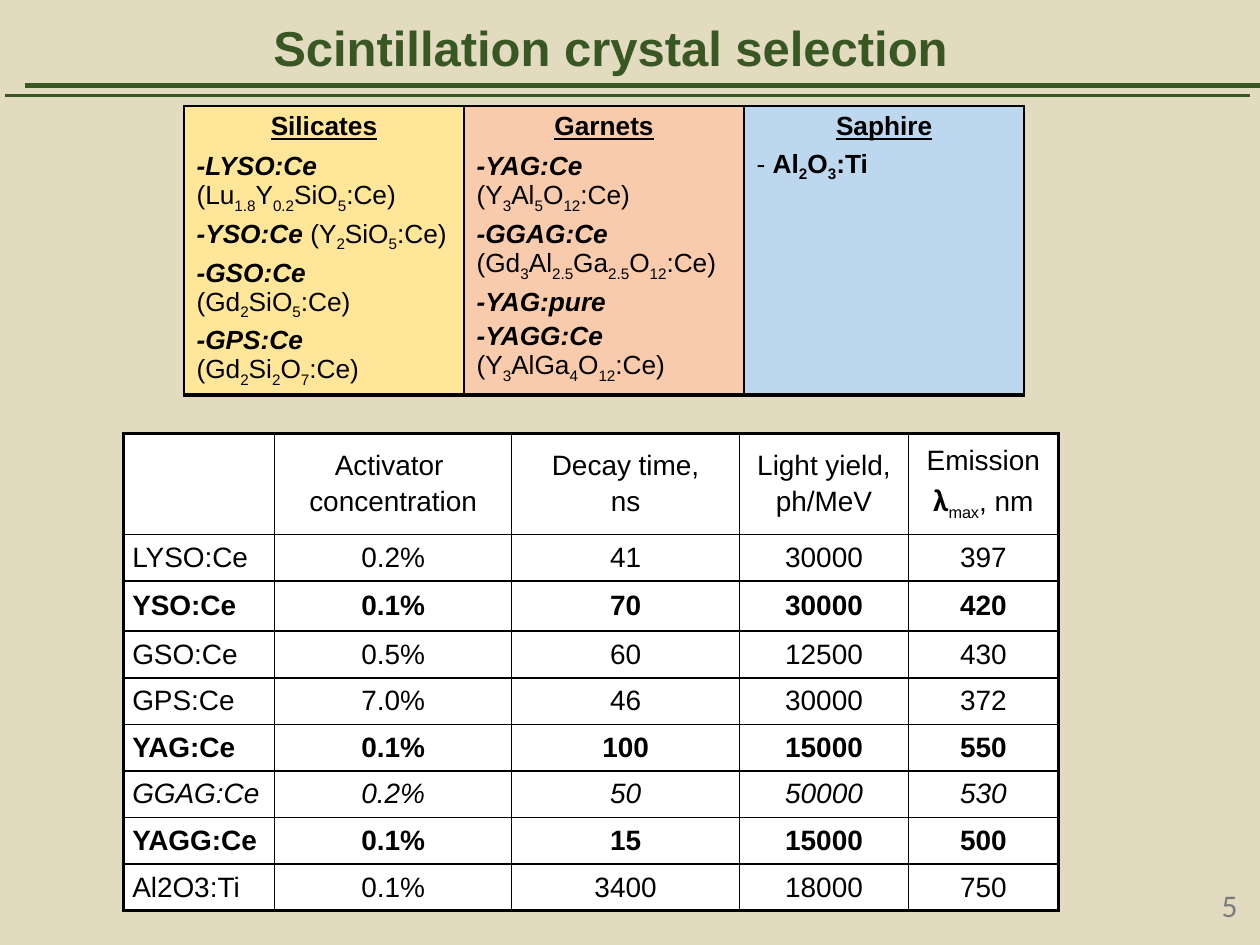
from pptx import Presentation
from pptx import util as u
from pptx.dml.color import RGBColor
from pptx.enum import shapes, text
from pptx.oxml import parse_xml
from pptx.oxml.ns import nsdecls

SAND = RGBColor(0xE3, 0xDB, 0xBF)
GREEN = RGBColor(0x38, 0x57, 0x23)
BLACK = RGBColor(0, 0, 0)
WHITE = RGBColor(0xFF, 0xFF, 0xFF)
GRAY = RGBColor(0x7C, 0x7C, 0x7C)
YELLOW = RGBColor(0xFF, 0xE6, 0x99)
PEACH = RGBColor(0xF8, 0xCB, 0xAD)
BLUE = RGBColor(0xBD, 0xD7, 0xEE)
LEFT, CENTER, RIGHT = text.PP_ALIGN.LEFT, text.PP_ALIGN.CENTER, text.PP_ALIGN.RIGHT
MIDDLE = text.MSO_ANCHOR.MIDDLE
BOLD, ITALIC = {"bold": True}, {"italic": True}
STRONG = BOLD | ITALIC

GROUPS = [
    ("Silicates", YELLOW, [("-LYSO:Ce ", "(Lu_1.8_Y_0.2_SiO_5_:Ce)"),
                           ("-YSO:Ce ", "(Y_2_SiO_5_:Ce)"),
                           ("-GSO:Ce ", "(Gd_2_SiO_5_:Ce)"),
                           ("-GPS:Ce ", "(Gd_2_Si_2_O_7_:Ce)")]),
    ("Garnets", PEACH, [("-YAG:Ce ", "(Y_3_Al_5_O_12_:Ce)"),
                        ("-GGAG:Ce ", "(Gd_3_Al_2.5_Ga_2.5_O_12_:Ce)"),
                        ("-YAG:pure", ""),
                        ("-YAGG:Ce ", "(Y_3_AlGa_4_O_12_:Ce)")]),
    ("Saphire", BLUE, []),
]
HEADINGS = [[], ["Activator ", "concentration"], ["Decay time,", "ns"],
            ["Light yield,", "ph/MeV"], ["Emission"]]
CRYSTALS = [
    (("LYSO:Ce", "0.2%", "41", "30000", "397"), {}),
    (("YSO:Ce", "0.1%", "70", "30000", "420"), BOLD),
    (("GSO:Ce", "0.5%", "60", "12500", "430"), {}),
    (("GPS:Ce", "7.0%", "46", "30000", "372"), {}),
    (("YAG:Ce", "0.1%", "100", "15000", "550"), BOLD),
    (("GGAG:Ce", "0.2%", "50", "50000", "530"), ITALIC),
    (("YAGG:Ce", "0.1%", "15", "15000", "500"), BOLD),
    (("Al2O3:Ti", "0.1%", "3400", "18000", "750"), {}),
]


class Board:
    columns, rows = 100, 75
    font = "Arial"

    def __init__(self):
        self.deck = Presentation()
        self.deck.slide_width, self.deck.slide_height = u.Inches(10), u.Inches(7.5)
        self.page = self.deck.slides.add_slide(self.deck.slide_layouts[5])
        self.page.background.fill.solid()
        self.page.background.fill.fore_color.rgb = SAND

    def x(self, column):
        return round(self.deck.slide_width * column / self.columns)

    def y(self, row):
        return round(self.deck.slide_height * row / self.rows)

    def area(self, left, top, width, height):
        return self.x(left), self.y(top), self.x(width), self.y(height)

    def title(self, words, *area):
        box = self.page.shapes.title
        box.left, box.top, box.width, box.height = self.area(*area)
        box.text_frame.vertical_anchor = MIDDLE
        para = self.paragraph(box.text_frame, CENTER, line=0.9)
        self.run(para, words, 28, color=GREEN, bold=True)

    def rule(self, left, right, row, weight):
        line = self.page.shapes.add_connector(
            shapes.MSO_CONNECTOR.STRAIGHT, self.x(left), self.y(row), self.x(right), self.y(row))
        line.line.color.rgb = GREEN
        line.line.width = u.Pt(weight)
        line._element.spPr.append(parse_xml(f"<a:effectLst {nsdecls('a')}/>"))

    def label(self, words, *area):
        box = self.page.shapes.add_textbox(*self.area(*area))
        box.text_frame.word_wrap = True
        box.text_frame.vertical_anchor = MIDDLE
        self.run(self.paragraph(box.text_frame, RIGHT), words, 18, font="Calibri", color=GRAY)

    def table(self, left, top, widths, heights):
        frame = self.page.shapes.add_table(
            len(heights), len(widths), *self.area(left, top, sum(widths), sum(heights)))
        table = frame.table
        table.first_row = table.horz_banding = False
        for column, width in zip(table.columns, widths):
            column.width = self.x(width)
        for row, height in zip(table.rows, heights):
            row.height = self.y(height)
        return table

    def cell(self, cell, fill, edges):
        cell.fill.solid()
        cell.fill.fore_color.rgb = fill
        for place, (side, weight) in enumerate(zip("LRTB", edges)):
            cell._tc.tcPr.insert(place, parse_xml(
                f'<a:ln{side} {nsdecls("a")} w="{u.Pt(weight)}"><a:solidFill>'
                f'<a:srgbClr val="{BLACK}"/></a:solidFill></a:ln{side}>'))
        return cell.text_frame

    def paragraph(self, frame, align=LEFT, line=None, after=None):
        first = frame.paragraphs[0]
        if first.runs:
            para = frame.add_paragraph()
            para.space_before = u.Pt(3)
        else:
            para = first
        para.alignment = align
        if line:
            para.line_spacing = line
        if after:
            para.space_after = u.Pt(after)
        return para

    def run(self, para, words, size, font=None, color=BLACK, lowered=False, **style):
        span = para.add_run()
        span.text = words
        span.font.name = font or self.font
        span.font.size = u.Pt(size)
        span.font.color.rgb = color
        for name, value in style.items():
            setattr(span.font, name, value)
        if lowered:
            span.font._element.set("baseline", "-25000")

    def formula(self, para, words, size, **style):
        for place, part in enumerate(words.split("_")):
            if part:
                self.run(para, part, size, lowered=place % 2 == 1, **style)


def add_groups(board):
    table = board.table(14.6, 8.4, [22.23] * 3, [22.9])
    for column, (name, fill, crystals) in enumerate(GROUPS):
        frame = board.cell(table.cell(0, column), fill, (1, 1, 1, 2))
        board.run(board.paragraph(frame, CENTER, after=3), name, 15, bold=True, underline=True)
        for crystal, composition in crystals:
            para = board.paragraph(frame)
            board.run(para, crystal, 15, **STRONG)
            board.formula(para, composition, 15)
    para = board.paragraph(frame, line=0.8)
    board.run(para, "- ", 15)
    board.formula(para, "Al_2_O_3_:Ti", 15, bold=True)


def add_properties(board):
    heights = [8, 3.7, 4] + [3.7] * 6
    table = board.table(9.8, 34.4, [12, 18.8, 18.1, 13.4, 11.9], heights)
    content = [(HEADINGS, {})] + [([[value] for value in values], style) for values, style in CRYSTALS]
    last_row, last_column = len(content) - 1, len(HEADINGS) - 1
    for row, (entries, style) in enumerate(content):
        for column, lines in enumerate(entries):
            outer = (column == 0, column == last_column, row == 0, row == last_row)
            cell = table.cell(row, column)
            frame = board.cell(cell, WHITE, [2.25 if edge else 1 for edge in outer])
            cell.vertical_anchor = MIDDLE
            cell.margin_left = cell.margin_right = u.Inches(0.07)
            for words in lines:
                para = board.paragraph(frame, CENTER if column else LEFT)
                board.run(para, words, 16, **style)
    para = board.paragraph(table.cell(0, last_column).text_frame, CENTER)
    board.run(para, "λ", 18, font="Calibri", bold=True)
    board.formula(para, "_max_, nm", 16)


def main():
    board = Board()
    board.rule(2, 100, 6.8, 3)
    board.rule(0.4, 99.2, 7.6, 1.5)
    board.title("Scintillation crystal selection", 19.3, 1.3, 58.3, 5.5)
    add_properties(board)
    add_groups(board)
    board.label("5", 76.7, 69.8, 22.5, 4)
    board.deck.save("out.pptx")


if __name__ == "__main__":
    main()
